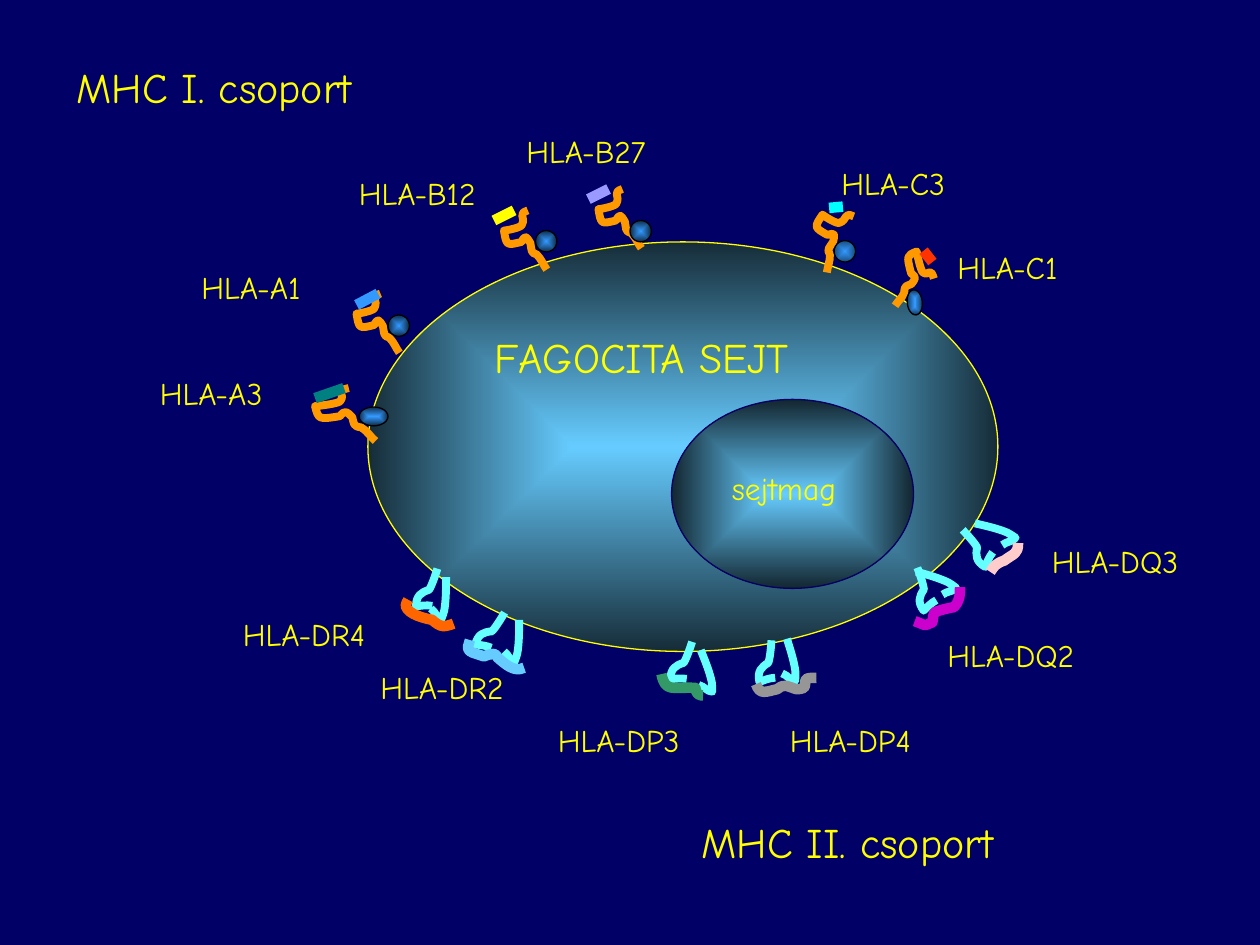
from lxml import etree
from pptx import Presentation
from pptx.dml.color import RGBColor
from pptx.enum.shapes import MSO_CONNECTOR, MSO_SHAPE
from pptx.enum.text import MSO_AUTO_SIZE
from pptx.oxml.ns import qn
from pptx.util import Cm, Pt

OVAL = MSO_SHAPE.OVAL
STRAIGHT = MSO_CONNECTOR.STRAIGHT
FIT = MSO_AUTO_SIZE.SHAPE_TO_FIT_TEXT
UNIT = 2.54  # cm per layout unit; the slide is 10 x 7.5 units

COLORS = {
    "bg": "000066", "text": "FFFF00", "cell": "66CCFF", "bead": "3399FF",
    "black": "000000", "mhc1": "FF9900", "mhc2": "66FFFF",
}

# Molecule parts: start point, then three points per Bézier piece
RECEPTOR = [(.19, 0), (.1, .03), (.18, .05), (.14, .12), (.12, .14), (.02, .16),
            (0, .16), (.02, .28), (.02, .28), (.14, .25), (.17, .19), (.18, .21),
            (.21, .26), (.22, .31), (.21, .34), (.26, .35), (.3, .39), (.31, .43),
            (.34, .47)]
LONG_ARM = [(.12, 0), (.12, .08), (.12, .16), (.11, .24), (.11, .27), (.08, .34),
            (.08, .34), (.04, .32), (.04, .28), (0, .25)]
SHORT_ARM = [(.15, .29), (.1, .3), (.07, .32), (.03, .34), (0, .26), (.03, .22),
             (.08, .18), (.09, .13), (.08, 0), (.08, 0)]

# Receptor box and turn, bead box, peptide ends and colour
CLASS_ONE = [
    ((2.5, 3.08, .48, .42), 0, (2.85, 3.23, .23, .15), (2.5, 3.16, 2.73, 3.08), "008080"),
    ((2.83, 2.33, .34, .47), 0, (3.08, 2.5, .17, .17), (2.83, 2.42, 3, 2.33), "3399FF"),
    ((4, 1.67, .34, .47), 0, (4.25, 1.83, .17, .17), (3.92, 1.75, 4.08, 1.67), "FFFF00"),
    ((4.75, 1.5, .34, .47), 0, (5, 1.75, .17, .17), (4.67, 1.58, 4.83, 1.5), "9999FF"),
    ((6.43, 1.64, .34, .47), 43.3, (6.62, 1.91, .17, .17), (6.58, 1.65, 6.69, 1.64), "00FFFF"),
    ((7.04, 2.04, .41, .33), 83.8, (7.16, 2.34, .2, .12), (7.33, 1.99, 7.4, 2.08), "FF3300"),
]

# Long arm (left, top, turn), short arm (same), peptide colour and curve
CLASS_TWO = [
    ((3.42, 4.58, 0), (3.33, 4.5, 21.3), "FF6600",
     [(3.24, 4.76), (3.23, 4.78), (3.22, 4.79), (3.22, 4.81), (3.24, 4.88),
      (3.38, 4.91), (3.43, 4.92), (3.45, 4.94), (3.49, 4.97), (3.52, 4.97),
      (3.55, 4.97), (3.6, 4.95), (3.6, 4.95)]),
    ((4, 4.92, 0), (3.83, 4.83, 34.2), "66CCFF",
     [(3.73, 5.08), (3.72, 5.13), (3.69, 5.15), (3.75, 5.18), (3.78, 5.19),
      (3.84, 5.21), (3.84, 5.21), (3.87, 5.2), (3.89, 5.19), (3.92, 5.19),
      (3.94, 5.19), (3.94, 5.21), (3.95, 5.22), (4.01, 5.27), (4.08, 5.34),
      (4.16, 5.3)]),
    ((5.51, 5.17, 337.8), (5.35, 5.08, 21.9), "339966",
     [(5.25, 5.35), (5.28, 5.5), (5.34, 5.45), (5.52, 5.46), (5.53, 5.48),
      (5.52, 5.5), (5.54, 5.51), (5.55, 5.52), (5.58, 5.52), (5.58, 5.52)]),
    ((6.18, 5.08, 342.3), (6.02, 5.08, 7.9), "969696",
     [(6, 5.43), (6.03, 5.52), (6.08, 5.49), (6.17, 5.47), (6.23, 5.42),
      (6.25, 5.45), (6.32, 5.47), (6.34, 5.47), (6.36, 5.47), (6.38, 5.46),
      (6.4, 5.44), (6.38, 5.41), (6.4, 5.39), (6.41, 5.38), (6.45, 5.38),
      (6.48, 5.38)]),
    ((7.36, 4.47, 285.4), (7.25, 4.5, 343.3), "CC00CC",
     [(7.26, 4.93), (7.37, 4.97), (7.32, 4.97), (7.4, 4.94), (7.41, 4.92),
      (7.4, 4.88), (7.42, 4.86), (7.43, 4.85), (7.55, 4.82), (7.57, 4.82),
      (7.62, 4.77), (7.62, 4.72), (7.62, 4.66)]),
    ((7.83, 4.08, 282.8), (7.67, 4.17, 320.3), "FFCCCC",
     [(7.86, 4.54), (7.89, 4.49), (7.91, 4.47), (7.97, 4.45), (8.05, 4.39),
      (8.08, 4.4), (8.08, 4.31)]),
]

# Text, left, top, width
LABELS = [
    ("HLA-A3", 1.17, 2.92, 1.25), ("HLA-A1", 1.5, 2.08, 1.25),
    ("HLA-B27", 4.08, 1, 1.58), ("HLA-B12", 2.75, 1.33, 1.5),
    ("HLA-C3", 6.58, 1.25, 1.25), ("HLA-C1", 7.5, 1.92, 1.25),
    ("HLA-DR2", 2.92, 5.25, 1.75), ("HLA-DR4", 1.83, 4.83, 1.5),
    ("HLA-DP3", 4.33, 5.67, 1.58), ("HLA-DP4", 6.17, 5.67, 2.33),
    ("HLA-DQ2", 7.42, 5, 2), ("HLA-DQ3", 8.25, 4.25, 1.75),
    ("sejtmag", 5.71, 3.67, 1.26),
]
HEADINGS = [
    ("FAGOCITA SEJT", 3.83, 2.58, 3), ("MHC I. csoport", .51, .44, 2.76),
    ("MHC II. csoport", 5.47, 6.43, 3.7),
]


def units(*values):
    return [Cm(v * UNIT) for v in values]


def stretch(template, box):
    """Fit a template into a box."""
    x, y, w, h = box
    tw, th = (max(axis) for axis in zip(*template))
    return [(x + px / tw * w, y + py / th * h) for px, py in template]


class Drawing:
    font = "Comic Neue"

    def __init__(self, slide):
        self.shapes = slide.shapes
        fill = slide.background.fill
        fill.solid()
        fill.fore_color.rgb = RGBColor.from_string(COLORS["bg"])

    def stroke(self, s, color, width):
        s.line.color.rgb = RGBColor.from_string(color)
        s.line.width = Pt(width)

    def oval(self, box, color, shade, outline, turn=0):
        s = self.shapes.add_shape(OVAL, *units(*box))
        s.rotation = turn
        s.shadow.inherit = False
        self.stroke(s, outline, .75)
        s.fill.solid()
        solid = s._element.spPr.find(qn("a:solidFill"))
        grad = etree.Element(qn("a:gradFill"), rotWithShape="1")
        stops = etree.SubElement(grad, qn("a:gsLst"))
        for pos in ("0", "100000"):
            stop = etree.SubElement(stops, qn("a:gs"), pos=pos)
            rgb = etree.SubElement(stop, qn("a:srgbClr"), val=color)
        # The outer stop is a darker shade of the same colour
        etree.SubElement(rgb, qn("a:gamma"))
        etree.SubElement(rgb, qn("a:shade"), val=str(shade))
        etree.SubElement(rgb, qn("a:invGamma"))
        focus = etree.SubElement(grad, qn("a:path"), path="shape")
        etree.SubElement(focus, qn("a:fillToRect"), l="50000", t="50000",
                         r="50000", b="50000")
        solid.getparent().replace(solid, grad)

    def curve(self, points, color, width=4.5, turn=0):
        start, *rest = [units(*p) for p in points]
        builder = self.shapes.build_freeform(*start)
        builder.add_line_segments(rest, close=False)
        s = builder.convert_to_shape()
        s.rotation = turn
        s.shadow.inherit = False
        s.fill.background()
        self.stroke(s, color, width)
        # Join each three points into one Bézier piece
        segments = list(s._element.spPr.iter(qn("a:lnTo")))
        for i in range(0, len(segments), 3):
            piece = etree.Element(qn("a:cubicBezTo"))
            segments[i].addprevious(piece)
            for segment in segments[i:i + 3]:
                piece.append(segment[0])
                segment.getparent().remove(segment)

    def line(self, ends, color, width):
        s = self.shapes.add_connector(STRAIGHT, *units(*ends))
        self.stroke(s, color, width)
        etree.SubElement(s._element.spPr, qn("a:effectLst"))

    def text(self, text, x, y, w, h, size):
        tf = self.shapes.add_textbox(*units(x, y, w, h)).text_frame
        tf.word_wrap = True
        tf.auto_size = FIT
        tf.text = text
        r = tf.paragraphs[0].runs[0]
        r.font.name = self.font
        r.font.size = Pt(size)
        r.font.color.rgb = RGBColor.from_string(COLORS["text"])


def main():
    prs = Presentation()
    prs.slide_width, prs.slide_height = units(10, 7.5)
    d = Drawing(prs.slides.add_slide(prs.slide_layouts[6]))

    # Cell and nucleus
    d.oval((2.92, 1.92, 5, 3.25), COLORS["cell"], 21961, COLORS["text"])
    d.oval((5.33, 3.17, 1.92, 1.5), COLORS["cell"], 18824, COLORS["bg"])

    # MHC class I molecules
    for box, turn, bead, peptide, color in CLASS_ONE:
        d.curve(stretch(RECEPTOR, box), COLORS["mhc1"], turn=turn)
        d.oval(bead, COLORS["bead"], 28235, COLORS["black"], turn)
        d.line(peptide, color, 6)

    # MHC class II molecules
    for long_arm, short_arm, color, peptide in CLASS_TWO:
        for template, (x, y, turn), w in ((LONG_ARM, long_arm, .12),
                                          (SHORT_ARM, short_arm, .15)):
            d.curve(stretch(template, (x, y, w, .34)), COLORS["mhc2"], turn=turn)
        d.curve(peptide, color, 6)

    # Labels and headings
    for label in LABELS:
        d.text(*label, h=.4, size=18)
    for heading in HEADINGS:
        d.text(*heading, h=.5, size=24)

    prs.save("out.pptx")


if __name__ == "__main__":
    main()
